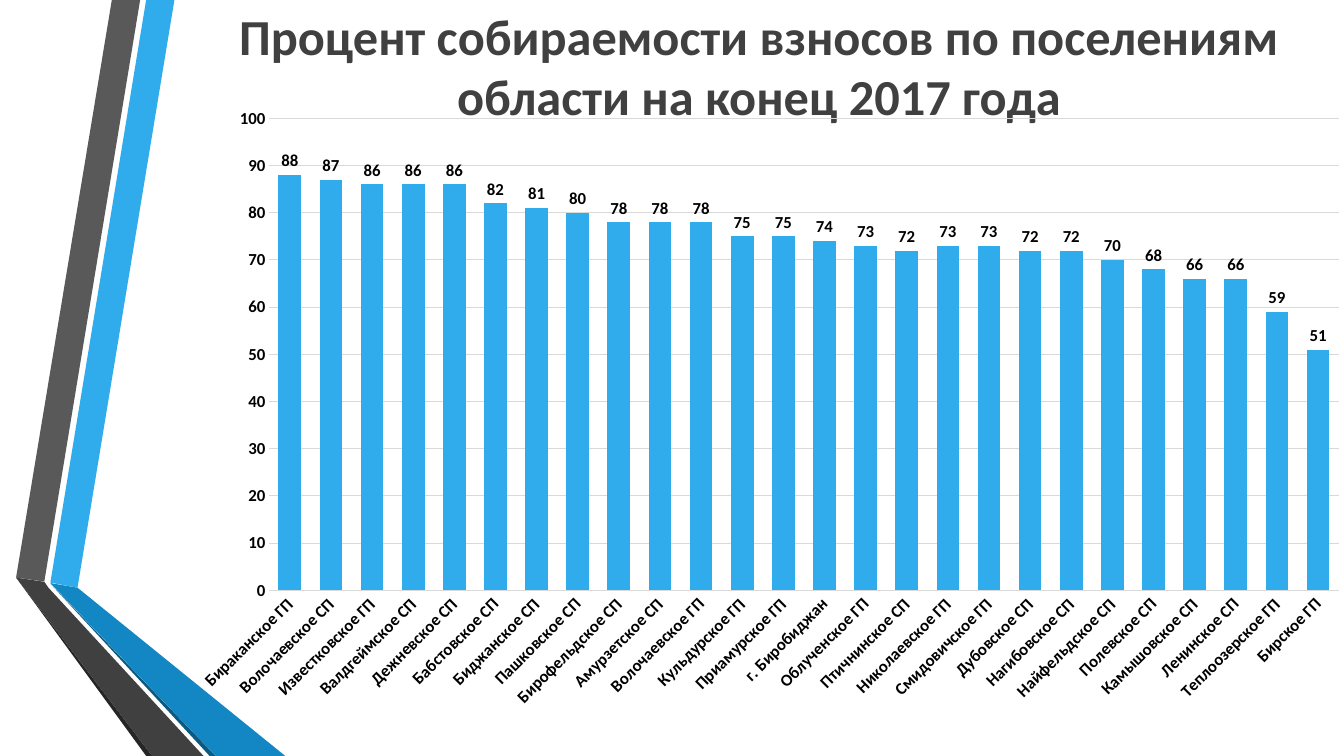
import pptx
import pptx.chart.data
import pptx.dml.color
import pptx.enum.chart
import pptx.enum.text
import pptx.util
from pptx.util import Pt

# Content
TITLE = "Процент собираемости взносов по поселениям области на конец 2017 года"
COLLECTION = [
    ("Бираканское ГП", 88), ("Волочаевское СП", 87), ("Известковское ГП", 86),
    ("Валдгеймское СП", 86), ("Дежневское СП", 86), ("Бабстовское СП", 82),
    ("Биджанское СП", 81), ("Пашковское СП", 80), ("Бирофельдское СП", 78),
    ("Амурзетское СП", 78), ("Волочаевское ГП", 78), ("Кульдурское ГП", 75),
    ("Приамурское ГП", 75), ("г. Биробиджан", 74), ("Облученское ГП", 73),
    ("Птичнинское СП", 72), ("Николаевское ГП", 73), ("Смидовичское ГП", 73),
    ("Дубовское СП", 72), ("Нагибовское СП", 72), ("Найфельдское СП", 70),
    ("Полевское СП", 68), ("Камышовское СП", 66), ("Ленинское СП", 66),
    ("Теплоозерское ГП", 59), ("Бирское ГП", 51),
]
COLORS = {
    "sky": "30ACEC", "blue": "1287C3", "navy": "0C5A82",
    "gray": "595959", "charcoal": "404040", "soot": "262626",
    "grid": "D9D9D9", "black": "000000",
}
FONT = "Calibri"

# Decorative ribbons, back to front: colour and corner points
RIBBONS = [
    ("sky", [(36, 416.2), (55.4, 419.8), (124.6, 0), (104.4, 0)]),
    ("gray", [(100.1, 0), (79.9, 0), (11.5, 412.6), (31.7, 415.4)]),
    ("soot", [(11.5, 412.6), (104.4, 540), (108.7, 540)]),
    ("navy", [(36, 416.9), (149.8, 540), (154.1, 540)]),
    ("blue", [(36, 416.5), (154.1, 540), (203.8, 540), (55.4, 419.8)]),
    ("charcoal", [(145.4, 540), (34.6, 419.8), (31.7, 415.6),
                  (11.5, 412.6), (108.7, 540)]),
]


def rgb(name):
    return pptx.dml.color.RGBColor.from_string(COLORS[name])


def style_font(font, size, color):
    font.name = FONT
    font.size = Pt(size)
    font.bold = True
    font.color.rgb = rgb(color)


def style_line(line, color):
    line.color.rgb = rgb(color)
    line.width = Pt(0.75)


def add_ribbon(page, color, corners):
    points = [(Pt(x), Pt(y)) for x, y in corners]
    builder = page.shapes.build_freeform(*points[0], scale=1.0)
    builder.add_line_segments(points[1:], close=True)
    ribbon = builder.convert_to_shape()
    ribbon.shadow.inherit = False
    ribbon.fill.solid()
    ribbon.fill.fore_color.rgb = rgb(color)
    ribbon.line.fill.background()


def add_title(page):
    box = page.shapes.title
    box.left, box.top, box.width, box.height = Pt(124.6), Pt(0), Pt(835.4), Pt(93.6)
    frame = box.text_frame
    frame.word_wrap = True
    frame.auto_size = pptx.enum.text.MSO_AUTO_SIZE.NONE
    frame.vertical_anchor = pptx.enum.text.MSO_ANCHOR.MIDDLE
    para = frame.paragraphs[0]
    para.alignment = pptx.enum.text.PP_ALIGN.CENTER
    span = para.add_run()
    span.text = TITLE
    style_font(span.font, 36, "charcoal")


def set_plot_area(chart, x, y, w, h):
    """Fix the inner plot area as fractions of the chart frame."""
    plot_area = chart.plots[0]._element.getparent()
    for old in plot_area.findall(pptx.oxml.ns.qn("c:layout")):
        plot_area.remove(old)
    settings = [("layoutTarget", "inner"), ("xMode", "edge"), ("yMode", "edge"),
                ("x", x), ("y", y), ("w", w), ("h", h)]
    inner = "".join(f'<c:{tag} val="{value}"/>' for tag, value in settings)
    plot_area.insert(0, pptx.oxml.parse_xml(
        f'<c:layout {pptx.oxml.ns.nsdecls("c")}>'
        f'<c:manualLayout>{inner}</c:manualLayout></c:layout>'))


def add_collection_chart(page):
    kinds = pptx.enum.chart
    data = pptx.chart.data.CategoryChartData(number_format="0")
    data.categories = [name for name, _ in COLLECTION]
    data.add_series("Процент собираемости", [value for _, value in COLLECTION])
    chart = page.shapes.add_chart(
        kinds.XL_CHART_TYPE.COLUMN_CLUSTERED,
        Pt(127.4), Pt(41), Pt(833), Pt(479.5), data).chart
    chart.has_title = False
    chart.has_legend = False
    style_font(chart.font, 12, "black")
    set_plot_area(chart, 0.078, 0.091, 0.917, 0.703)

    # Axes
    names, scale = chart.category_axis, chart.value_axis
    for axis in (names, scale):
        axis.major_tick_mark = axis.minor_tick_mark = kinds.XL_TICK_MARK.NONE
        style_font(axis.tick_labels.font, 12, "black")
    style_line(names.format.line, "grid")
    names.tick_labels._element.txPr.bodyPr.set("rot", "-2700000")
    scale.minimum_scale, scale.maximum_scale, scale.major_unit = 0, 100, 10
    scale.tick_labels.number_format = "0"
    scale.tick_labels.number_format_is_linked = False
    scale.format.line.fill.background()
    scale.has_major_gridlines = True
    style_line(scale.major_gridlines.format.line, "grid")

    # Columns and their labels
    plot = chart.plots[0]
    plot.vary_by_categories = False
    plot.gap_width, plot.overlap = 81, -27
    columns = plot.series[0]
    columns.format.fill.solid()
    columns.format.fill.fore_color.rgb = rgb("sky")
    labels = columns.data_labels
    labels.show_value = True
    labels.number_format = "0"
    labels.number_format_is_linked = False
    labels.position = kinds.XL_LABEL_POSITION.OUTSIDE_END
    style_font(labels.font, 12, "black")


def main():
    deck = pptx.Presentation()
    deck.slide_width, deck.slide_height = Pt(960), Pt(540)
    page = deck.slides.add_slide(deck.slide_layouts.get_by_name("Title Only"))
    for color, corners in RIBBONS:
        add_ribbon(page, color, corners)
    add_title(page)
    add_collection_chart(page)
    deck.save("out.pptx")


if __name__ == "__main__":
    main()
